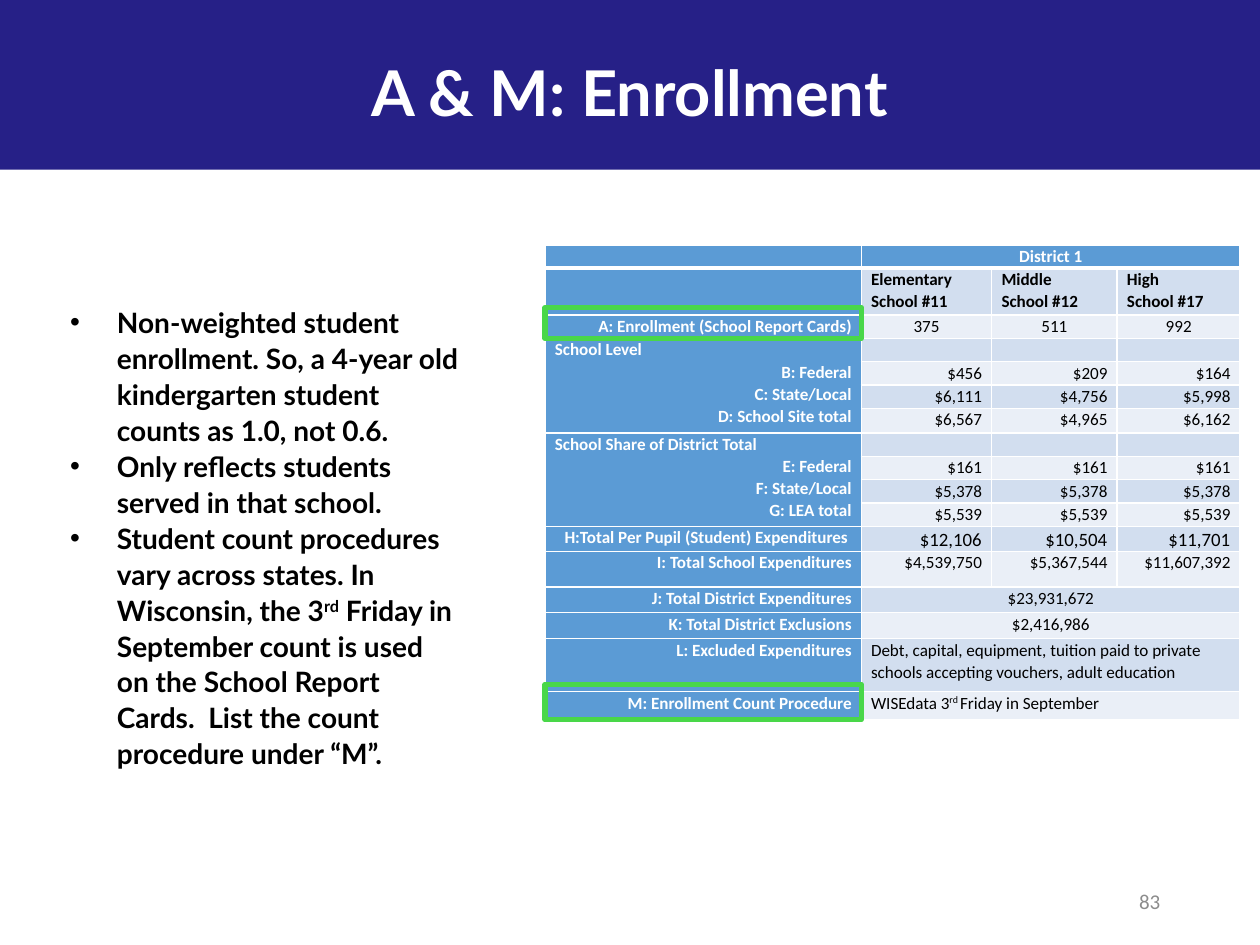
from lxml import etree
from pptx import Presentation
from pptx.dml.color import RGBColor
from pptx.enum import shapes, text
from pptx.oxml.ns import qn
from pptx.util import Inches, Pt

COLORS = {"banner": "262087", "label": "5B9BD5", "odd": "D2DEEF", "even": "EAEFF7",
          "highlight": "49D749", "white": "FFFFFF", "black": "000000", "number": "8C8C8C"}
LEFT, CENTER, RIGHT = text.PP_ALIGN.LEFT, text.PP_ALIGN.CENTER, text.PP_ALIGN.RIGHT

TITLE = "A & M: Enrollment"
PAGE = "83"
# Text between carets is superscript.
POINTS = [
    "Non-weighted student enrollment. So, a 4-year old kindergarten student counts as 1.0, not 0.6.",
    "Only reflects students served in that school.",
    "Student count procedures vary across states. In Wisconsin, the 3^rd^ Friday in September "
    "count is used on the School Report Cards.  List the count procedure under “M”.",
]
# Row height, label lines, values (a single value spans the three schools), value alignment.
# Several label lines span as many rows.
ROWS = [
    (0.19, [], ["District 1"], CENTER),
    (0.38, [], ["Elementary\nSchool #11", "Middle\nSchool #12", "High\nSchool #17"], LEFT),
    (0.19, ["A: Enrollment (School Report Cards)"], ["375", "511", "992"], CENTER),
    (0.19, ["School Level", "B: Federal", "C: State/Local", "D: School Site total"],
     ["", "", ""], RIGHT),
    (0.19, [], ["$456", "$209", "$164"], RIGHT),
    (0.19, [], ["$6,111", "$4,756", "$5,998"], RIGHT),
    (0.20, [], ["$6,567", "$4,965", "$6,162"], RIGHT),
    (0.19, ["School Share of District Total", "E: Federal", "F: State/Local", "G: LEA total"],
     ["", "", ""], RIGHT),
    (0.19, [], ["$161", "$161", "$161"], RIGHT),
    (0.19, [], ["$5,378", "$5,378", "$5,378"], RIGHT),
    (0.19, [], ["$5,539", "$5,539", "$5,539"], RIGHT),
    (0.20, ["H:Total Per Pupil (Student) Expenditures "], ["$12,106", "$10,504", "$11,701"], RIGHT),
    (0.29, ["I: Total School Expenditures"], ["$4,539,750", "$5,367,544", "$11,607,392"], RIGHT),
    (0.21, ["J: Total District Expenditures"], ["$23,931,672"], CENTER),
    (0.21, ["K: Total District Exclusions"], ["$2,416,986"], CENTER),
    (0.43, ["L: Excluded Expenditures"],
     ["Debt, capital, equipment, tuition paid to private schools accepting vouchers, "
      "adult education"], LEFT),
    (0.23, ["M: Enrollment Count Procedure"], ["WISEdata 3^rd ^Friday in September"], LEFT),
]
HEADER, SCHOOLS, ENROLLMENT, PER_PUPIL, PROCEDURE = 0, 1, 2, 11, 16
COLUMNS = [2.57, 1.06, 1.02, 1.0]
TABLE_LEFT, TABLE_TOP = 4.43, 1.99
HEIGHTS = [row[0] for row in ROWS]


def rgb(name):
    return RGBColor.from_string(COLORS[name])


def write(paragraph, words, size, color, font="Calibri", bold=False):
    for index, part in enumerate(words.split("^")):
        if not part:
            continue
        run = paragraph.add_run()
        run.text = part
        for key, value in {"size": Pt(size), "name": font, "bold": bold}.items():
            setattr(run.font, key, value)
        run.font.color.rgb = rgb(color)
        if index % 2:
            run._r.get_or_add_rPr().set("baseline", "30000")


def place(shape, left, top, width, height):
    shape.left, shape.top = Inches(left), Inches(top)
    shape.width, shape.height = Inches(width), Inches(height)


def add_borders(cell, top=1, bottom=1):
    tcPr = cell._tc.get_or_add_tcPr()
    for side, points in {"L": 1, "R": 1, "T": top, "B": bottom}.items():
        line = etree.SubElement(tcPr, qn(f"a:ln{side}"), w=str(Pt(points)))
        fill = etree.SubElement(line, qn("a:solidFill"))
        etree.SubElement(fill, qn("a:srgbClr"), val=COLORS["white"])


def fill_cell(cell, lines, aligns, fill, color, size=10, bold=False):
    cell.margin_left = cell.margin_right = Inches(0.08)
    cell.margin_top = cell.margin_bottom = 0
    cell.fill.solid()
    cell.fill.fore_color.rgb = rgb(fill)
    frame = cell.text_frame
    for index, (line, align) in enumerate(zip(lines or [""], aligns)):
        paragraph = frame.add_paragraph() if index else frame.paragraphs[0]
        paragraph.alignment, paragraph.line_spacing = align, 1.07
        write(paragraph, line, size, color, bold=bold)
        if not line:
            etree.SubElement(paragraph._p, qn("a:endParaRPr"), sz=str(size * 100))


def add_expenditures(slide):
    frame = slide.shapes.add_table(len(ROWS), len(COLUMNS), Inches(TABLE_LEFT), Inches(TABLE_TOP),
                                   Inches(sum(COLUMNS)), Inches(sum(HEIGHTS)))
    table = frame.table
    for column, width in zip(table.columns, COLUMNS):
        column.width = Inches(width)
    for r, (height, labels, values, align) in enumerate(ROWS):
        table.rows[r].height = Inches(height)
        for c in range(len(COLUMNS)):
            add_borders(table.cell(r, c), top=3 if r == SCHOOLS else 1,
                        bottom=3 if r == HEADER else 1)
        label = table.cell(r, 0)
        if len(labels) > 1:
            label.merge(table.cell(r + len(labels) - 1, 0))
        if not label.is_spanned:
            aligns = [LEFT if len(labels) > 1 else RIGHT] + [RIGHT] * 3
            fill_cell(label, labels, aligns, "label", "white", bold=True)
        if len(values) == 1:
            table.cell(r, 1).merge(table.cell(r, 3))
        for c, value in enumerate(values, 1):
            fill_cell(table.cell(r, c), value.split("\n"), [align] * 2,
                      "label" if r == HEADER else "odd" if r % 2 else "even",
                      "white" if r == HEADER else "black",
                      size=11 if r == PER_PUPIL else 10, bold=r <= SCHOOLS)


def add_highlight(slide, row):
    lift = 0.06
    top = TABLE_TOP + sum(HEIGHTS[:row]) - lift
    box = slide.shapes.add_shape(shapes.MSO_SHAPE.RECTANGLE, Inches(TABLE_LEFT), Inches(top),
                                 Inches(COLUMNS[0]), Inches(HEIGHTS[row] + lift))
    box.shadow.inherit = False
    box.fill.background()
    box.line.color.rgb = rgb("highlight")
    box.line.width = Pt(3)


def add_banner(slide):
    banner = slide.shapes.add_shape(shapes.MSO_SHAPE.RECTANGLE, 0, 0, Inches(10.24), Inches(1.38))
    banner.shadow.inherit = False
    banner.fill.solid()
    banner.fill.fore_color.rgb = rgb("banner")
    banner.line.fill.background()
    banner.element.getparent().insert(2, banner.element)


def add_points(body):
    place(body, 0.47, 2.41, 3.37, 4.06)
    frame = body.text_frame
    frame.auto_size = text.MSO_AUTO_SIZE.NONE
    for index, point in enumerate(POINTS):
        paragraph = frame.add_paragraph() if index else frame.paragraphs[0]
        paragraph.line_spacing = 1.07
        paragraph.space_before = paragraph.space_after = Pt(0)
        pPr = paragraph._p.get_or_add_pPr()
        pPr.set("marL", str(Inches(0.38)))
        pPr.set("indent", str(Inches(-0.38)))
        etree.SubElement(pPr, qn("a:buFont"), typeface="Arial")
        etree.SubElement(pPr, qn("a:buChar"), char="•")
        write(paragraph, point, 16.4, "black", "Lato", True)


def main():
    deck = Presentation()
    deck.slide_width, deck.slide_height = Inches(10.24), Inches(7.68)
    slide = deck.slides.add_slide(deck.slide_layouts[1])
    title, body = slide.placeholders
    add_banner(slide)

    place(title, 0.35, 0, 9.54, 1.48)
    title.text_frame.vertical_anchor = text.MSO_ANCHOR.MIDDLE
    title.text_frame.auto_size = text.MSO_AUTO_SIZE.NONE
    heading = title.text_frame.paragraphs[0]
    heading.alignment = CENTER
    write(heading, TITLE, 36.9, "white", "Lato", True)

    add_points(body)
    add_expenditures(slide)
    for row in (ENROLLMENT, PROCEDURE):
        add_highlight(slide, row)

    page = slide.shapes.add_textbox(Inches(7.23), Inches(7.12), Inches(2.3), Inches(0.41))
    page.text_frame.word_wrap = True
    page.text_frame.vertical_anchor = text.MSO_ANCHOR.MIDDLE
    page.text_frame.paragraphs[0].alignment = RIGHT
    write(page.text_frame.paragraphs[0], PAGE, 12.3, "number")
    deck.save("out.pptx")


if __name__ == "__main__":
    main()
